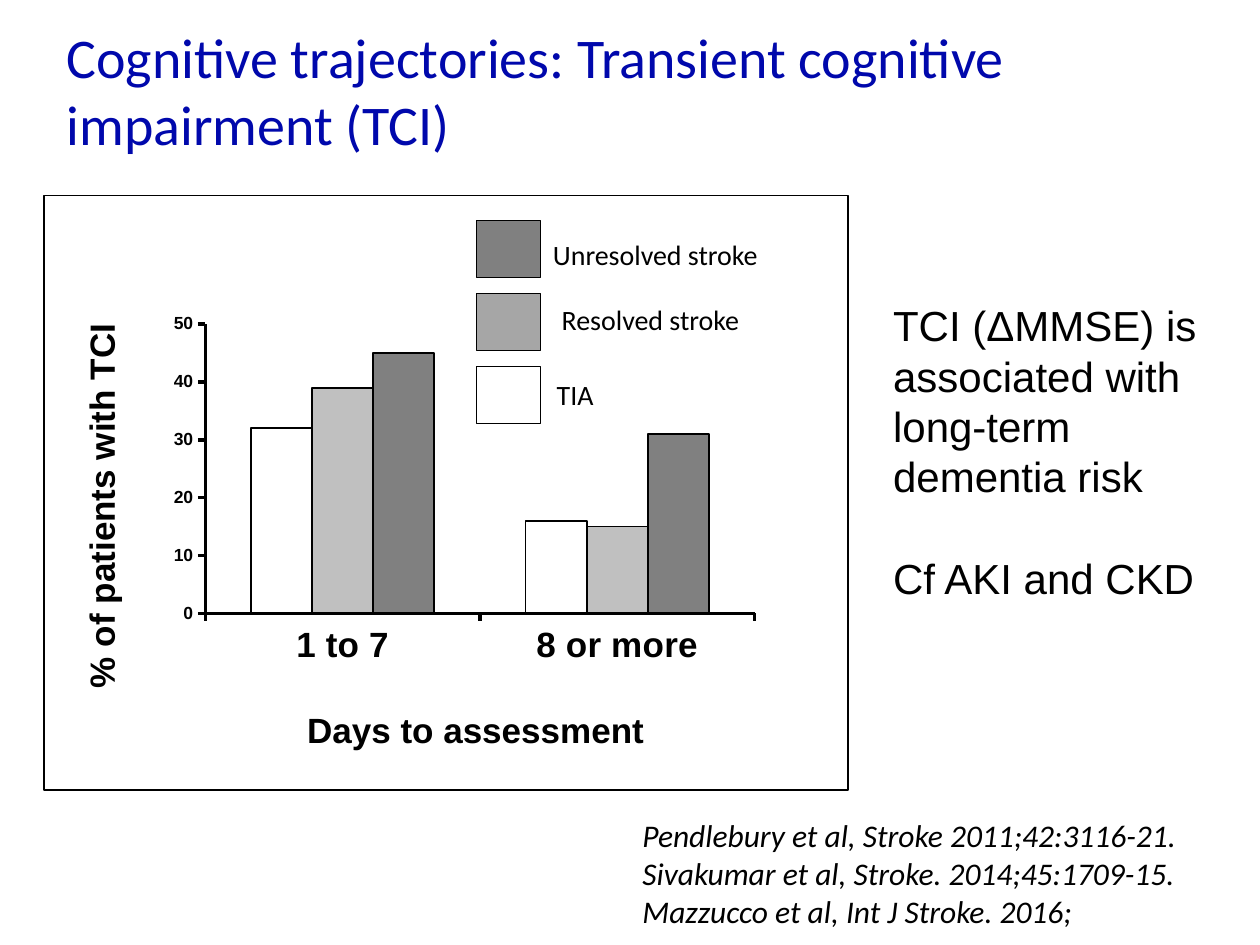
import pptx
import pptx.util
import pptx.chart.data
import pptx.dml.color
import pptx.enum.chart
import pptx.enum.shapes
import pptx.enum.text
import pptx.oxml
import pptx.oxml.ns

Inches, Pt = pptx.util.Inches, pptx.util.Pt
LEFT = pptx.enum.text.PP_ALIGN.LEFT
MID = pptx.enum.text.PP_ALIGN.CENTER
HUES = {"ink": "000000", "title": "0008AC", "white": "FFFFFF",
        "light": "C0C0C0", "key": "A6A6A6", "dark": "808080"}


def shade(name):
    """Return the named colour."""
    return pptx.dml.color.RGBColor.from_string(HUES[name])


def write(slide, box, lines, size, face="Arial", hue="ink", bold=False,
          slant=False, align=LEFT, wrap=True, gap=0):
    """Place a text box with one paragraph for each line."""
    label = slide.shapes.add_textbox(*map(Inches, box))
    frame = label.text_frame
    frame.word_wrap = wrap
    frame.text = "\n".join(lines)
    for n, para in enumerate(frame.paragraphs):
        para.alignment = align
        para.space_before = Pt(gap if n else 0)
        for run in para.runs:
            font = run.font
            font.name, font.size = face, Pt(size)
            font.bold, font.italic = bold, slant
            font.color.rgb = shade(hue)
    return label


def draw_box(slide, box, hue=None):
    """Draw a thin outlined rectangle, filled if a colour is given."""
    kind = pptx.enum.shapes.MSO_SHAPE.RECTANGLE
    rect = slide.shapes.add_shape(kind, *map(Inches, box))
    rect.shadow.inherit = False
    if hue:
        rect.fill.solid()
        rect.fill.fore_color.rgb = shade(hue)
    else:
        rect.fill.background()
    rect.line.color.rgb = shade("ink")
    rect.line.width = Pt(0.75)


def style_axis(axis, size):
    """Give an axis bold labels, outer ticks and a heavy line."""
    axis.has_major_gridlines = False
    axis.major_tick_mark = pptx.enum.chart.XL_TICK_MARK.OUTSIDE
    axis.minor_tick_mark = pptx.enum.chart.XL_TICK_MARK.NONE
    font = axis.tick_labels.font
    font.name, font.size, font.bold = "Arial", Pt(size), True
    font.color.rgb = shade("ink")
    axis.format.line.color.rgb = shade("ink")
    axis.format.line.width = Pt(2)


def set_plot(chart, box):
    """Fix the inner plot area as fractions of the chart."""
    area = chart.plots[0]._element.getparent()
    for old in area.findall(pptx.oxml.ns.qn("c:layout")):
        area.remove(old)
    parts = "".join(f'<c:{tag} val="{val}"/>' for tag, val in zip("xywh", box))
    area.insert(0, pptx.oxml.parse_xml(
        f'<c:layout {pptx.oxml.ns.nsdecls("c")}><c:manualLayout>'
        '<c:layoutTarget val="inner"/><c:xMode val="edge"/>'
        f'<c:yMode val="edge"/>{parts}</c:manualLayout></c:layout>'))


def draw_chart(slide, box):
    """Place the clustered columns."""
    data = pptx.chart.data.CategoryChartData(number_format="0")
    data.categories = ["1 to 7", "8 or more"]
    data.add_series("TIA", (32, 16))
    data.add_series("Resolved stroke", (39, 15))
    data.add_series("Unresolved stroke", (45, 31))
    kind = pptx.enum.chart.XL_CHART_TYPE.COLUMN_CLUSTERED
    chart = slide.shapes.add_chart(kind, *map(Inches, box), data).chart
    chart.has_legend = chart.has_title = False
    chart.font.name, chart.font.size = "Arial", Pt(10)
    chart.font.color.rgb = shade("ink")
    plot = chart.plots[0]
    plot.gap_width, plot.overlap = 150, 0
    plot.vary_by_categories = False
    for bars, hue in zip(plot.series, ("white", "light", "dark")):
        bars.format.fill.solid()
        bars.format.fill.fore_color.rgb = shade(hue)
        bars.format.line.color.rgb = shade("ink")
        bars.format.line.width = Pt(1)
    style_axis(chart.category_axis, 20)
    axis = chart.value_axis
    style_axis(axis, 10)
    axis.minimum_scale, axis.maximum_scale, axis.major_unit = 0, 50, 10
    axis.tick_labels.number_format = "0"
    axis.tick_labels.number_format_is_linked = False
    set_plot(chart, (0.13, 0.18, 0.86, 0.58))


def draw_key(slide, left, top):
    """Draw the colour key, one swatch and label a row."""
    rows = [("Unresolved stroke", "dark", 0.51, 0.09, 1.85),
            ("Resolved stroke", "key", 0.58, 0.02, 1.63),
            ("TIA", "white", 0.54, 0.04, 0.5)]
    for n, (name, hue, dx, dy, wide) in enumerate(rows):
        y = top + n * 0.58
        draw_box(slide, (left, y, 0.51, 0.45), hue)
        write(slide, (left + dx, y + dy, wide, 0.37), [name], 16, "Calibri",
              wrap=False)


def draw_panel(slide, left, top, wide, high):
    """Draw the framed figure with its chart, key and axis titles."""
    draw_box(slide, (left, top, wide, high))
    draw_chart(slide, (left + 0.62, top + 0.31, 5.07, 3.96))
    draw_key(slide, left + 3.43, top + 0.2)
    side = write(slide, (left - 1.74, top + 2.18, 4.52, 0.57),
                 ["% of patients with TCI"], 20, bold=True, align=MID)
    side.rotation = 270
    write(slide, (left + 1.53, top + 4.02, 3.79, 0.63),
          ["Days to assessment"], 20, bold=True, align=MID)


def main():
    """Build and save the slide."""
    deck = pptx.Presentation()
    deck.slide_width, deck.slide_height = Inches(10), Inches(7.5)
    slide = deck.slides.add_slide(deck.slide_layouts[6])
    write(slide, (0.43, 0.13, 9.57, 1.18),
          ["Cognitive trajectories: Transient cognitive impairment (TCI)"],
          32, "Calibri", "title")
    write(slide, (5, 6.43, 4.48, 1.01),
          ["Pendlebury et al, Stroke 2011;42:3116-21.",
           "Sivakumar et al, Stroke. 2014;45:1709-15.",
           "Mazzucco et al, Int J Stroke. 2016;"], 18, "Calibri", slant=True)
    draw_panel(slide, 0.35, 1.55, 6.38, 4.72)
    write(slide, (6.99, 2.33, 2.76, 2.52),
          ["TCI (ΔMMSE) is associated with long-term dementia risk",
           "Cf AKI and CKD"], 24, gap=29)
    deck.save("out.pptx")


if __name__ == "__main__":
    main()
